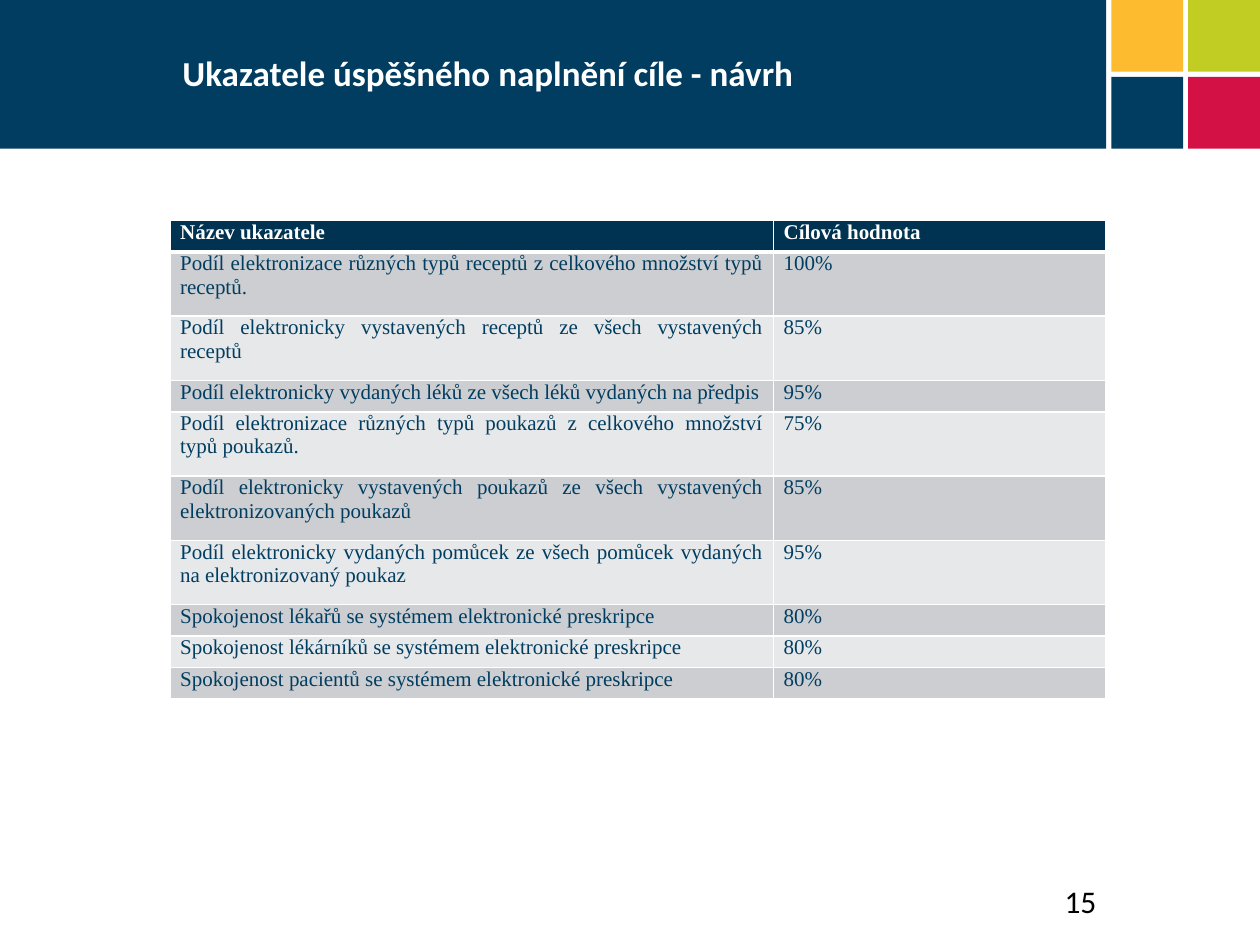
from lxml.etree import SubElement
from pptx import Presentation
from pptx.dml.color import RGBColor
from pptx.enum.shapes import MSO_SHAPE
from pptx.enum.text import MSO_ANCHOR, PP_ALIGN
from pptx.oxml.ns import qn
from pptx.util import Inches, Pt

COLORS = {
    "navy": "003D61",
    "header": "003352",
    "red": "D31145",
    "green": "C2CD23",
    "yellow": "FDBB30",
    "odd": "CCCED1",
    "even": "E7E8E9",
    "white": "FFFFFF",
    "black": "000000",
}

INDICATORS = [
    ("Název ukazatele", "Cílová hodnota", 0.25),
    ("Podíl elektronizace různých typů receptů z celkového množství typů receptů.", "100%", 0.51),
    ("Podíl elektronicky vystavených receptů ze všech vystavených receptů", "85%", 0.51),
    ("Podíl elektronicky vydaných léků ze všech léků vydaných na předpis", "95%", 0.25),
    ("Podíl elektronizace různých typů poukazů z celkového množství typů poukazů.", "75%", 0.51),
    ("Podíl elektronicky vystavených poukazů ze všech vystavených elektronizovaných poukazů", "85%", 0.51),
    ("Podíl elektronicky vydaných pomůcek ze všech pomůcek vydaných na elektronizovaný poukaz", "95%", 0.51),
    ("Spokojenost lékařů se systémem elektronické preskripce", "80%", 0.25),
    ("Spokojenost lékárníků se systémem elektronické preskripce", "80%", 0.25),
    ("Spokojenost pacientů se systémem elektronické preskripce", "80%", 0.25),
]


class SlideBuilder:
    heading_font = "Calibri"
    table_font = "Times New Roman"

    def __init__(self, slide):
        self.slide = slide

    def color(self, name):
        return RGBColor.from_string(COLORS[name])

    def style(self, paragraph, font, size, color, bold=False):
        paragraph.font.name = font
        paragraph.font.size = Pt(size)
        paragraph.font.bold = bold
        paragraph.font.color.rgb = self.color(color)

    def block(self, left, top, width, height, color):
        shape = self.slide.shapes.add_shape(
            MSO_SHAPE.RECTANGLE, Inches(left), Inches(top), Inches(width), Inches(height))
        shape.shadow.inherit = False
        shape.fill.solid()
        shape.fill.fore_color.rgb = self.color(color)
        shape.line.fill.background()

    def text(self, left, top, width, height, text, size, color, anchor, align, bold=False):
        shape = self.slide.shapes.add_textbox(
            Inches(left), Inches(top), Inches(width), Inches(height))
        frame = shape.text_frame
        frame.word_wrap = True
        frame.vertical_anchor = anchor
        paragraph = frame.paragraphs[0]
        paragraph.text = text
        paragraph.alignment = align
        self.style(paragraph, self.heading_font, size, color, bold)

    def borders(self, cell, widths):
        properties = cell._tc.get_or_add_tcPr()
        for side, width in zip("LRTB", widths):
            line = SubElement(properties, qn(f"a:ln{side}"), w=str(Pt(width)))
            fill = SubElement(line, qn("a:solidFill"))
            SubElement(fill, qn("a:srgbClr"), val=COLORS["white"])

    def cell(self, cell, text, row):
        header = row == 0
        self.borders(cell, (1, 1, 3 if row == 1 else 1, 3 if header else 1))
        cell.fill.solid()
        cell.fill.fore_color.rgb = self.color("header" if header else ("even", "odd")[row % 2])
        cell.margin_left = cell.margin_right = Inches(0.08)
        cell.margin_top = cell.margin_bottom = 0
        paragraph = cell.text_frame.paragraphs[0]
        paragraph.text = text
        paragraph.alignment = PP_ALIGN.JUSTIFY
        paragraph.space_after = Pt(6)
        self.style(paragraph, self.table_font, 12, "white" if header else "navy", header)

    def table(self, left, top, column_widths, rows):
        table = self.slide.shapes.add_table(
            len(rows), len(column_widths), Inches(left), Inches(top),
            Inches(sum(column_widths)), Inches(sum(row[-1] for row in rows))).table
        for column, width in zip(table.columns, column_widths):
            column.width = Inches(width)
        for index, (*texts, height) in enumerate(rows):
            table.rows[index].height = Inches(height)
            for column, text in enumerate(texts):
                self.cell(table.cell(index, column), text, index)


def main():
    presentation = Presentation()
    presentation.slide_width = Inches(10)
    presentation.slide_height = Inches(7.5)
    builder = SlideBuilder(presentation.slides.add_slide(presentation.slide_layouts[6]))

    builder.block(0, 0, 8.78, 1.18, "navy")
    square, pitch = 0.57, 0.61
    for row, colors in enumerate((("yellow", "green"), ("navy", "red"))):
        for column, color in enumerate(colors):
            builder.block(8.82 + column * pitch, row * pitch, square, square, color)

    builder.text(1.35, 0, 7.43, 1.15, "Ukazatele úspěšného naplnění cíle - návrh",
                 20, "white", MSO_ANCHOR.MIDDLE, PP_ALIGN.LEFT, True)
    builder.table(1.35, 1.75, (4.79, 2.64), INDICATORS)
    builder.text(6.79, 6.83, 2.01, 0.52, "15", 18, "black", MSO_ANCHOR.BOTTOM, PP_ALIGN.RIGHT)
    presentation.save("out.pptx")


if __name__ == "__main__":
    main()
